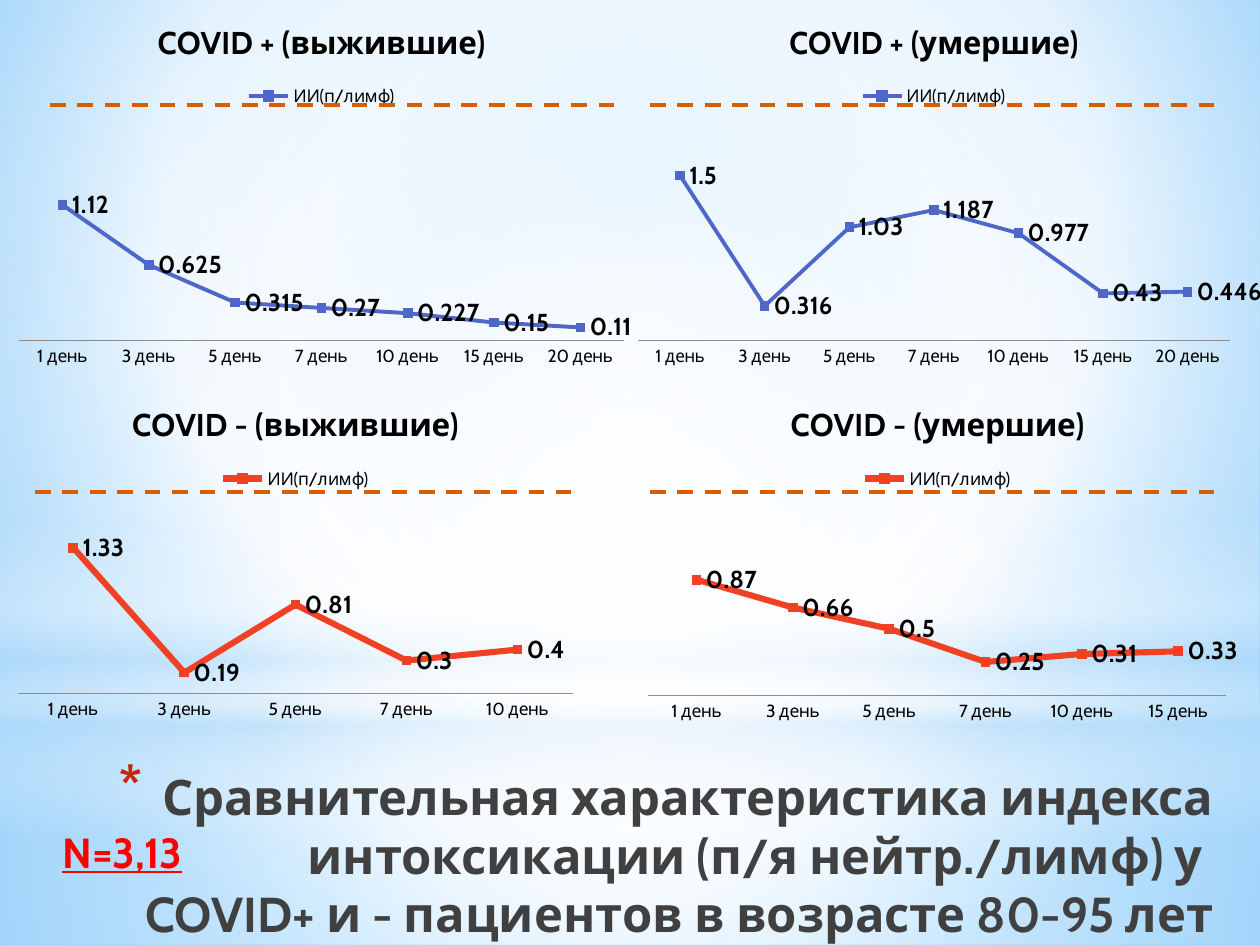
from lxml import etree
from pptx import Presentation
from pptx.chart import data
from pptx.dml.color import RGBColor
from pptx.enum import chart as charts, dml, shapes, text
from pptx.oxml import ns, parse_xml
from pptx.util import Emu, Pt

PX = 914400 / 126


class Theme:
    font = "Cabin"
    black, heading, red = "000000", "404040", "FF0000"
    blue_series, red_series = "4E67C8", "F14124"
    threshold, axis, bullet = "D85C00", "8C8C8C", "C3260C"
    white, haze = "FFFFFF", "B4DCFA"
    heading_size, norm_size, title_size, label_size, chart_size = 28, 24, 18, 14, 10


def px(*lengths):
    return [Emu(round(length * PX)) for length in lengths]


def rgb(value):
    return RGBColor.from_string(value)


def style(font, size, color=Theme.black, bold=False):
    font.name, font.size, font.bold = Theme.font, Pt(size), bold
    font.color.rgb = rgb(color)


def set_gradient(fill, owner, stops, center=None):
    """Stops are (position, colour, opacity); without a centre it runs downwards."""
    fill.gradient()
    gradient = owner.find(".//" + ns.qn("a:gradFill"))
    marks = "".join(
        f'<a:gs pos="{pos * 1000}"><a:srgbClr val="{color}">'
        f'<a:alpha val="{alpha * 1000}"/></a:srgbClr></a:gs>'
        for pos, color, alpha in stops)
    if center:
        sides = " ".join(f'{side}="{part * 1000}"' for side, part in zip("ltrb", center))
        shade = f'<a:path path="circle"><a:fillToRect {sides}/></a:path>'
    else:
        shade = '<a:lin ang="5400000" scaled="0"/>'
    gradient.getparent().replace(gradient, parse_xml(
        f'<a:gradFill {ns.nsdecls("a")} rotWithShape="1">'
        f"<a:gsLst>{marks}</a:gsLst>{shade}</a:gradFill>"))


def add_backdrop(slide, box):
    left, top, width, height = box
    white, haze = Theme.white, Theme.haze
    middle = (50, 50, 50, 50)
    set_gradient(slide.background.fill, slide._element,
                 [(0, "9ED5FF", 100), (60, white, 100), (100, "5BB9FF", 100)],
                 (20, 10, 20, 60))
    rect, oval = shapes.MSO_SHAPE.RECTANGLE, shapes.MSO_SHAPE.OVAL
    layers = [
        (rect, 703, 242, [(0, white, 91), (37, white, 76), (100, haze, 79)], middle),
        (rect, 0, 703, [(0, white, 89), (48, white, 62), (100, haze, 79)], middle),
        (rect, 519, 315, [(0, white, 0), (29, white, 30), (45, haze, 40),
                          (55, white, 26), (65, haze, 60), (100, white, 0)], None),
        (oval, 220, 703, [(0, white, 100), (56, white, 0)], middle),
    ]
    for kind, offset, depth, stops, center in layers:
        layer = slide.shapes.add_shape(kind, *px(left, top + offset, width, depth))
        layer.shadow.inherit = False
        layer.line.fill.background()
        set_gradient(layer.fill, layer._element, stops, center)


def add_heading(slide, box):
    frame = slide.shapes.add_textbox(*px(*box)).text_frame
    frame.word_wrap = True
    heading = frame.paragraphs[0]
    heading.alignment = text.PP_ALIGN.RIGHT
    heading.add_run().text = "Сравнительная характеристика индекса интоксикации (п/я нейтр./лимф) у "
    heading.add_line_break()
    heading.add_run().text = "COVID+ и - пациентов в возрасте 80-95 лет"
    style(heading.font, Theme.heading_size, Theme.heading, True)
    # Hanging star bullet
    props = heading._p.get_or_add_pPr()
    indent = px(44)[0]
    props.set("marL", str(indent))
    props.set("indent", str(-indent))
    bullet = [parse_xml(f'<a:buClr {ns.nsdecls("a")}><a:srgbClr val="{Theme.bullet}"/></a:buClr>'),
              etree.Element(ns.qn("a:buSzPct"), val="128000"),
              etree.Element(ns.qn("a:buChar"), char="*")]
    for place, part in enumerate(bullet):
        props.insert(place, part)


def add_norm(slide, box):
    frame = slide.shapes.add_textbox(*px(*box)).text_frame
    frame.word_wrap = True
    norm = frame.paragraphs[0]
    norm.text = "N=3,13"
    style(norm.font, Theme.norm_size, Theme.red, True)
    norm.font.underline = True


def set_plot_area(chart, plot):
    fields = "".join(f'<c:{name} val="{value}"/>' for name, value in zip("xywh", plot))
    layout = parse_xml(
        f'<c:layout {ns.nsdecls("c")}><c:manualLayout><c:layoutTarget val="inner"/>'
        f'<c:xMode val="edge"/><c:yMode val="edge"/>{fields}</c:manualLayout></c:layout>')
    area = chart._chartSpace.chart.plotArea
    for old in area.findall(ns.qn("c:layout")):
        area.remove(old)
    area.insert(0, layout)


def add_index_chart(slide, box, title, days, values, top_value, plot, color, weight):
    index = data.CategoryChartData()
    index.categories = [f"{day} день" for day in days]
    index.add_series("ИИ(п/лимф)", values)
    chart = slide.shapes.add_chart(charts.XL_CHART_TYPE.LINE_MARKERS, *px(*box), index).chart
    style(chart.font, Theme.chart_size)
    set_plot_area(chart, plot)
    # Title and legend
    chart.has_title = True
    caption = chart.chart_title.text_frame
    caption.text = title
    style(caption.paragraphs[0].font, Theme.title_size, bold=True)
    chart.has_legend = True
    chart.legend.position = charts.XL_LEGEND_POSITION.TOP
    chart.legend.include_in_layout = False
    # Axes
    value_axis, day_axis = chart.value_axis, chart.category_axis
    value_axis.minimum_scale, value_axis.maximum_scale = 0, top_value
    value_axis.has_major_gridlines = False
    value_axis.visible = False
    day_axis.major_tick_mark = charts.XL_TICK_MARK.NONE
    day_axis.format.line.color.rgb = rgb(Theme.axis)
    day_axis.format.line.width = Pt(0.75)
    # Index line with its labels
    chart.plots[0].vary_by_categories = False
    series = chart.plots[0].series[0]
    series.smooth = False
    series.format.line.color.rgb = rgb(color)
    series.format.line.width = Pt(weight)
    marker = series.marker
    marker.style, marker.size = charts.XL_MARKER_STYLE.SQUARE, 5
    marker.format.fill.solid()
    marker.format.fill.fore_color.rgb = rgb(color)
    marker.format.line.color.rgb = rgb(color)
    labels = series.data_labels
    labels.show_value = True
    labels.position = charts.XL_LABEL_POSITION.RIGHT
    style(labels.font, Theme.label_size, bold=True)


def add_threshold(slide, left, right, y):
    line = slide.shapes.add_connector(shapes.MSO_CONNECTOR.STRAIGHT, *px(left, y, right, y))
    line.line.color.rgb = rgb(Theme.threshold)
    line.line.width = Pt(2.25)
    line.line.dash_style = dml.MSO_LINE.DASH
    etree.SubElement(line._element.spPr, ns.qn("a:effectLst"))


def main():
    deck = Presentation()
    deck.slide_width, deck.slide_height = px(1260, 945)
    slide = deck.slides.add_slide(deck.slide_layouts[6])
    add_backdrop(slide, (0, 0, 1260, 945))
    add_heading(slide, (35, 760, 1191, 159))
    add_norm(slide, (50, 820, 189, 63))

    days = [1, 3, 5, 7, 10, 15, 20]
    positive, negative = (Theme.blue_series, 2.25), (Theme.red_series, 3.5)
    groups = [
        ((0, 0, 643, 383), "COVID + (выжившие)",
         [1.12, 0.625, 0.315, 0.27, 0.227, 0.15, 0.11], 1.2, (0.03, 0.51, 0.94, 0.38), positive),
        ((619, 0, 643, 383), "COVID + (умершие)",
         [1.5, 0.316, 1.03, 1.187, 0.977, 0.43, 0.446], 1.6, (0.03, 0.43, 0.94, 0.46), positive),
        ((0, 383, 591, 357), "COVID - (выжившие)",
         [1.33, 0.19, 0.81, 0.3, 0.4], 1.4, (0.03, 0.44, 0.94, 0.43), negative),
        ((630, 383, 615, 359), "COVID - (умершие)",
         [0.87, 0.66, 0.5, 0.25, 0.31, 0.33], 1, (0.03, 0.5, 0.94, 0.37), negative),
    ]
    for box, title, values, top_value, plot, look in groups:
        add_index_chart(slide, box, title, days[:len(values)], values, top_value, plot, *look)

    # Upper limit of the norm over each chart
    for left, right, y in [(50, 620, 105), (650, 1220, 105), (35, 571, 492), (650, 1216, 492)]:
        add_threshold(slide, left, right, y)
    deck.save("out.pptx")


if __name__ == "__main__":
    main()
